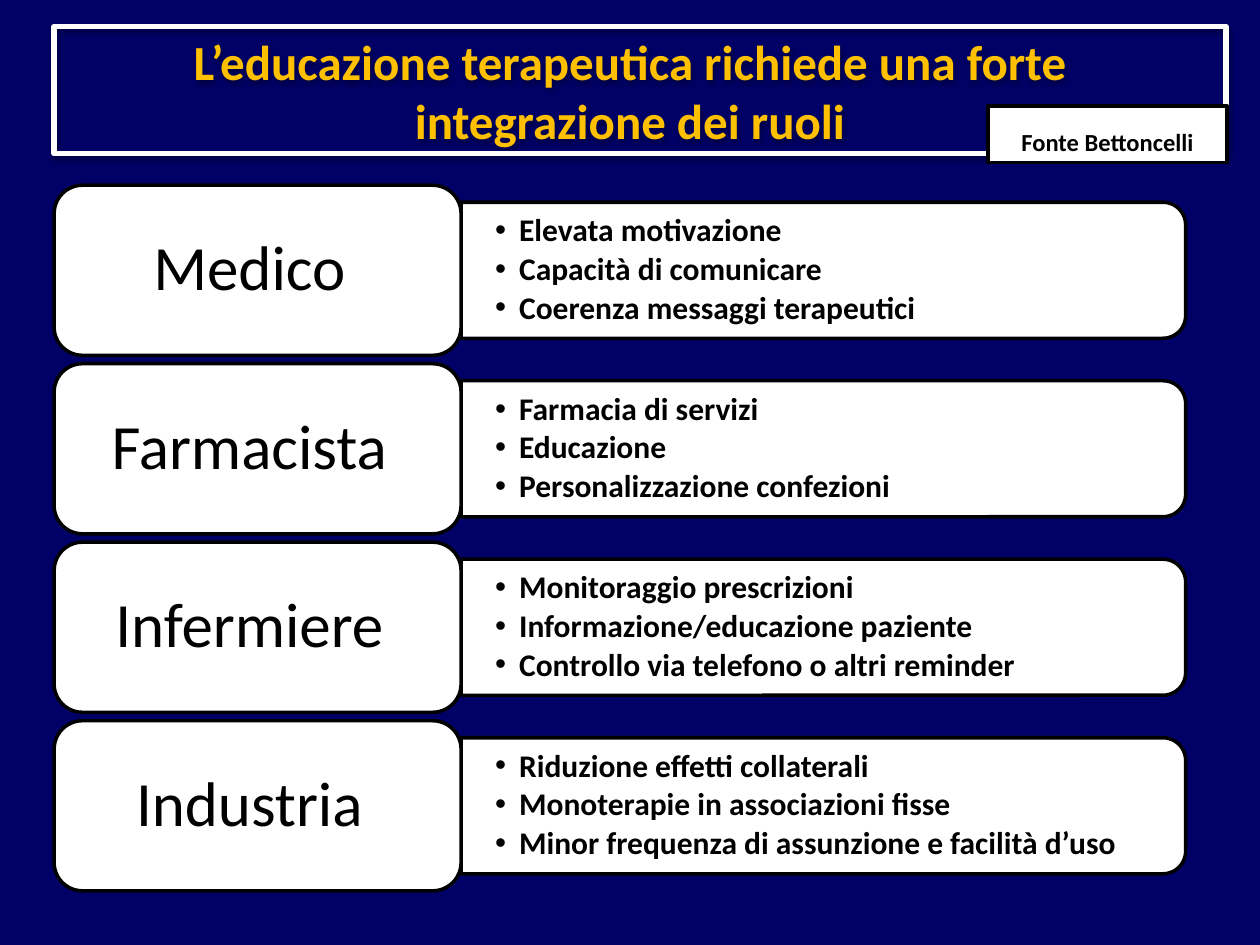
import dataclasses

import lxml.etree
import pptx
import pptx.dml.color
import pptx.enum.shapes
import pptx.enum.text
import pptx.oxml
import pptx.oxml.ns
import pptx.util

Inches = pptx.util.Inches
Pt = pptx.util.Pt
Shapes = pptx.enum.shapes.MSO_SHAPE
Align = pptx.enum.text.PP_ALIGN
Anchor = pptx.enum.text.MSO_ANCHOR
qn = pptx.oxml.ns.qn


@dataclasses.dataclass(frozen=True)
class Theme:
    font: str = "Calibri"
    background: str = "000066"
    panel: str = "FFFFFF"
    ink: str = "000000"
    accent: str = "FFC000"
    title_size: float = 28
    role_size: float = 36
    duty_size: float = 18
    source_size: float = 14
    frame_line: float = 3
    panel_line: float = 2


def rgb(value):
    return pptx.dml.color.RGBColor.from_string(value)


def set_values(target, values):
    for name, value in values.items():
        setattr(target, name, value)


class SlideBuilder:
    def __init__(self, slide, theme):
        self.slide = slide
        self.theme = theme
        fill = slide.background.fill
        fill.solid()
        fill.fore_color.rgb = rgb(theme.background)

    def panel(self, kind, left, top, width, height, rotation=0):
        box = self.slide.shapes.add_shape(
            kind, Inches(left), Inches(top), Inches(width), Inches(height))
        box.rotation = rotation
        box.shadow.inherit = False
        box.fill.solid()
        box.fill.fore_color.rgb = rgb(self.theme.panel)
        box.line.color.rgb = rgb(self.theme.ink)
        box.line.width = Pt(self.theme.panel_line)
        return box

    def frame(self, left, top, width, height):
        box = self.panel(Shapes.RECTANGLE, left, top, width, height)
        box.fill.background()
        box.line.color.rgb = rgb(self.theme.panel)
        box.line.width = Pt(self.theme.frame_line)
        effects = box._element.spPr.find(qn("a:effectLst"))
        shadow = lxml.etree.SubElement(
            effects, qn("a:outerShdw"), blurRad=str(Pt(3.1)), dist=str(Pt(1.6)),
            dir="5400000", rotWithShape="0")
        color = lxml.etree.SubElement(shadow, qn("a:srgbClr"), val=self.theme.ink)
        lxml.etree.SubElement(color, qn("a:alpha"), val="38000")
        return box

    def text_box(self, left, top, width, height):
        return self.slide.shapes.add_textbox(
            Inches(left), Inches(top), Inches(width), Inches(height))

    def add_text(self, box, lines, size, color=None, bold=True, frame=None, para=None,
                 bullets=False):
        text_frame = box.text_frame
        set_values(text_frame, {"word_wrap": True, "vertical_anchor": Anchor.MIDDLE,
                                **(frame or {})})
        for index, line in enumerate(lines):
            paragraph = text_frame.add_paragraph() if index else text_frame.paragraphs[0]
            paragraph.text = line
            set_values(paragraph, {"alignment": Align.CENTER, **(para or {})})
            for span in paragraph.runs:
                set_values(span.font, {"name": self.theme.font, "size": Pt(size),
                                       "bold": bold})
                span.font.color.rgb = rgb(color or self.theme.ink)
            if bullets:
                self.bullet(paragraph)

    def bullet(self, paragraph):
        properties = paragraph._p.get_or_add_pPr()
        properties.set("marL", str(Inches(0.19)))
        properties.set("indent", str(Inches(-0.19)))
        lxml.etree.SubElement(properties, qn("a:buFont"), typeface="Arial")
        lxml.etree.SubElement(properties, qn("a:buChar"), char="•")

    def role_row(self, top, role, duties):
        label_left, label_width, label_height = 0.43, 3.23, 1.35
        bar_left, bar_width, bar_height = 3.66, 5.75, 1.08
        duty_width, duty_height = 5.69, 0.97
        middle = top + label_height / 2
        self.panel(Shapes.ROUND_2_SAME_RECTANGLE,
                   bar_left + (bar_width - bar_height) / 2, middle - bar_width / 2,
                   bar_height, bar_width, rotation=90)
        duty_box = self.text_box(bar_left, middle - duty_height / 2,
                                 duty_width, duty_height)
        self.add_text(duty_box, duties, self.theme.duty_size, bullets=True,
                      frame={"margin_left": Inches(0.27), "margin_right": Inches(0.27),
                             "margin_top": 0, "margin_bottom": 0},
                      para={"alignment": Align.LEFT, "level": 1, "line_spacing": 0.9,
                            "space_after": Pt(2.7)})
        label = self.panel(Shapes.ROUNDED_RECTANGLE,
                           label_left, top, label_width, label_height)
        self.add_text(label, [role], self.theme.role_size, bold=False,
                      frame={"margin_left": Inches(0.15), "margin_right": Inches(0.28)},
                      para={"line_spacing": 0.9})


ROLES = {
    "Medico": ["Elevata motivazione", "Capacità di comunicare",
               "Coerenza messaggi terapeutici"],
    "Farmacista": ["Farmacia di servizi", "Educazione", "Personalizzazione confezioni"],
    "Infermiere": ["Monitoraggio prescrizioni", "Informazione/educazione paziente",
                   "Controllo via telefono o altri reminder"],
    "Industria": ["Riduzione effetti collaterali", "Monoterapie in associazioni fisse",
                  "Minor frequenza di assunzione e facilità d’uso"],
}


def main():
    deck = pptx.Presentation()
    deck.slide_width, deck.slide_height = Inches(10), Inches(7.5)
    theme = Theme()
    builder = SlideBuilder(deck.slides.add_slide(deck.slide_layouts[6]), theme)

    title = builder.frame(0.43, 0.21, 9.3, 1.01)
    builder.add_text(title,
                     ["L’educazione terapeutica richiede una forte\vintegrazione dei ruoli"],
                     theme.title_size, theme.accent, frame={"margin_right": Inches(0.26)})

    first_top, last_top = 1.47, 5.72
    pitch = (last_top - first_top) / (len(ROLES) - 1)
    for index, (role, duties) in enumerate(ROLES.items()):
        builder.role_row(first_top + index * pitch, role, duties)

    source = builder.panel(Shapes.RECTANGLE, 7.84, 0.84, 1.9, 0.45)
    builder.add_text(source, ["Fonte Bettoncelli"], theme.source_size,
                     frame={"vertical_anchor": Anchor.TOP}, para={"line_spacing": 1.5})
    deck.save("out.pptx")


if __name__ == "__main__":
    main()
